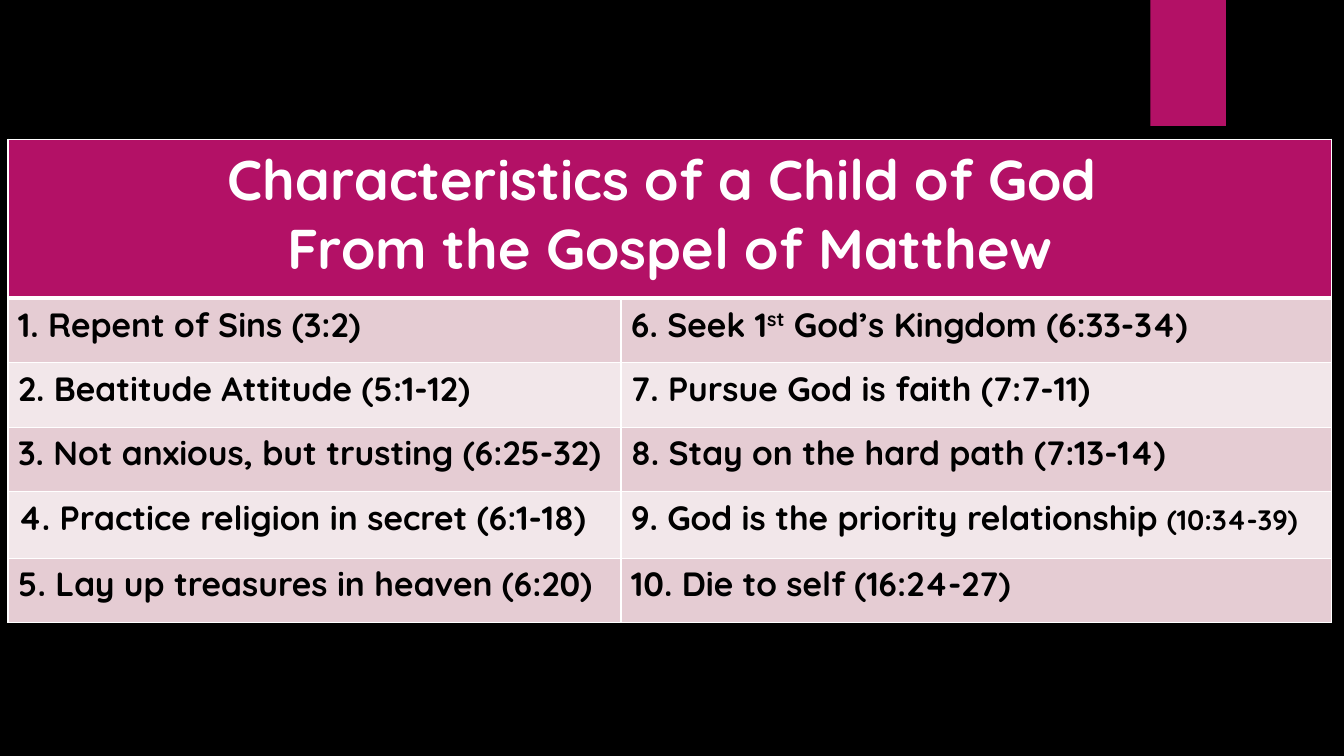
from lxml import etree
from pptx import Presentation
from pptx.dml.color import RGBColor
from pptx.enum.shapes import MSO_SHAPE
from pptx.enum.text import PP_ALIGN
from pptx.oxml.ns import qn
from pptx.util import Inches, Pt

RECTANGLE = MSO_SHAPE.RECTANGLE
LEFT, CENTER = PP_ALIGN.LEFT, PP_ALIGN.CENTER
BLACK, WHITE, MAGENTA = "000000", "FFFFFF", "B31166"
BANDS = ["E5CCD3", "F2E7EA"]

TITLE_LINES = ["Characteristics of a Child of God ", "From the Gospel of Matthew"]
# Each trait is a list of runs: text, size in points, superscript
TRAITS = [
    ([("1. Repent of Sins (3:2)", 24, False)],
     [("6. Seek 1", 24, False), ("st", 24, True), (" God’s Kingdom (6:33-34)", 24, False)]),
    ([("2. Beatitude Attitude (5:1-12)", 24, False)],
     [("7. Pursue God is faith (7:7-11)", 24, False)]),
    ([("3. Not anxious, but trusting (6:25-32)", 24, False)],
     [("8. Stay on the hard path (7:13-14)", 24, False)]),
    ([("4. Practice religion in secret (6:1-18)", 24, False)],
     [("9. God is the priority relationship ", 24, False), ("(10:34-39)", 20, False)]),
    ([("5. Lay up treasures in heaven (6:20)", 24, False)],
     [("10. Die to self (16:24-27)", 24, False)]),
]


def paint(fill, color):
    fill.solid()
    fill.fore_color.rgb = RGBColor.from_string(color)


def fill_cell(cell, paragraphs, color, text_color, align, top=1, bottom=1):
    """Set borders (widths in points), fill and text runs of a table cell."""
    properties = cell._tc.get_or_add_tcPr()
    for side, width in (("L", 1), ("R", 1), ("T", top), ("B", bottom)):
        border = etree.SubElement(properties, qn(f"a:ln{side}"), w=str(Pt(width)))
        solid = etree.SubElement(border, qn("a:solidFill"))
        etree.SubElement(solid, qn("a:srgbClr"), val=WHITE)
    paint(cell.fill, color)
    for index, runs in enumerate(paragraphs):
        frame = cell.text_frame
        para = frame.add_paragraph() if index else frame.paragraphs[0]
        para.alignment = align
        for text, size, superscript in runs:
            span = para.add_run()
            span.text = text
            span.font.name = "Quicksand"
            span.font.size = Pt(size)
            span.font.bold = True
            span.font.color.rgb = RGBColor.from_string(text_color)
            if superscript:
                span.font._element.set("baseline", "30000")


deck = Presentation()
deck.slide_width, deck.slide_height = Inches(13.33), Inches(7.5)
page = deck.slides.add_slide(deck.slide_layouts[6])
paint(page.background.fill, BLACK)

ribbon = page.shapes.add_shape(RECTANGLE, Inches(11.41), 0, Inches(0.75), Inches(1.25))
ribbon.shadow.inherit = False
paint(ribbon.fill, MAGENTA)
ribbon.line.fill.background()

table = page.shapes.add_table(
    len(TRAITS) + 1, 2, Inches(0.08), Inches(1.38), Inches(13.13), Inches(4.8)).table
for column, width in zip(table.columns, (6.08, 7.05)):
    column.width = Inches(width)
for row, height in zip(table.rows, (1.58, 0.64, 0.64, 0.64, 0.66, 0.64)):
    row.height = Inches(height)

header = table.cell(0, 0)
header.merge(table.cell(0, 1))
title = [[(line, 40, False)] for line in TITLE_LINES]
fill_cell(header, title, MAGENTA, WHITE, CENTER, bottom=3)
fill_cell(table.cell(0, 1), [], MAGENTA, WHITE, CENTER, bottom=3)

for row_index, traits in enumerate(TRAITS, start=1):
    for column_index, runs in enumerate(traits):
        fill_cell(table.cell(row_index, column_index), [runs], BANDS[(row_index - 1) % 2],
                  BLACK, LEFT, top=3 if row_index == 1 else 1)

deck.save("out.pptx")
